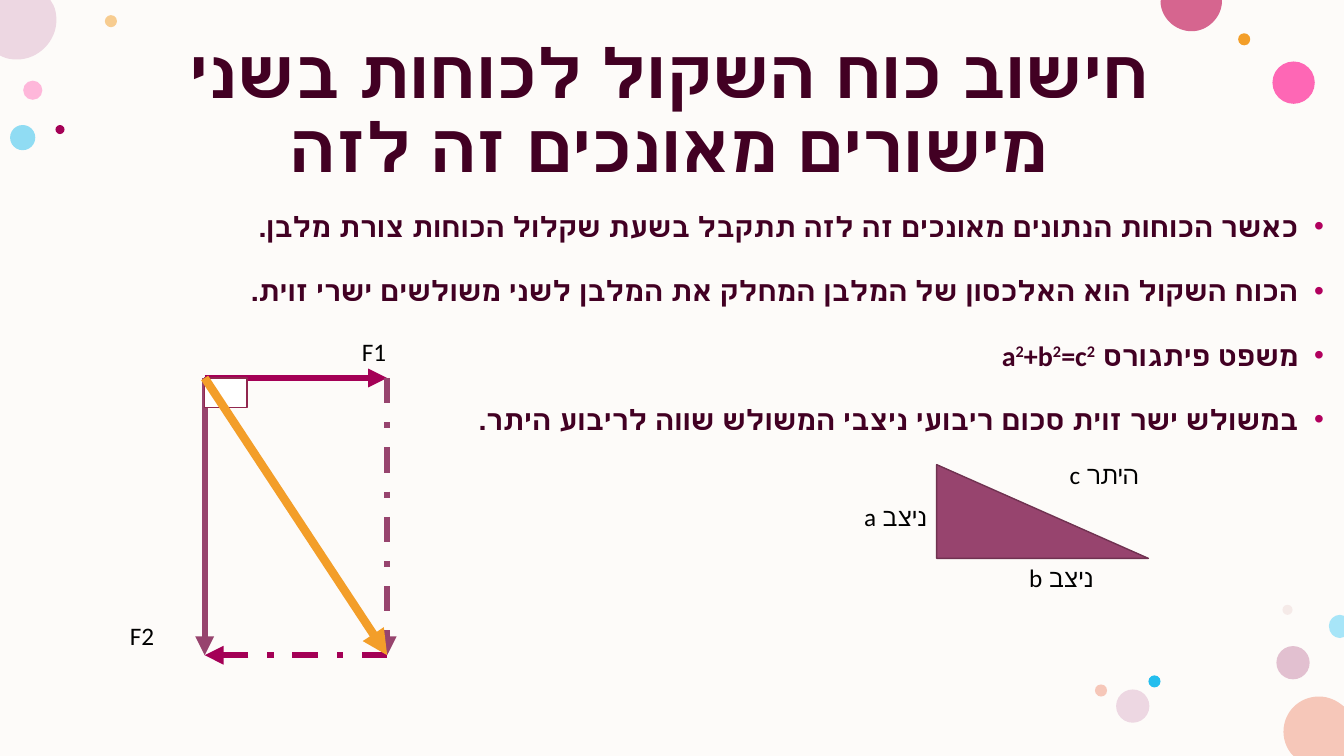
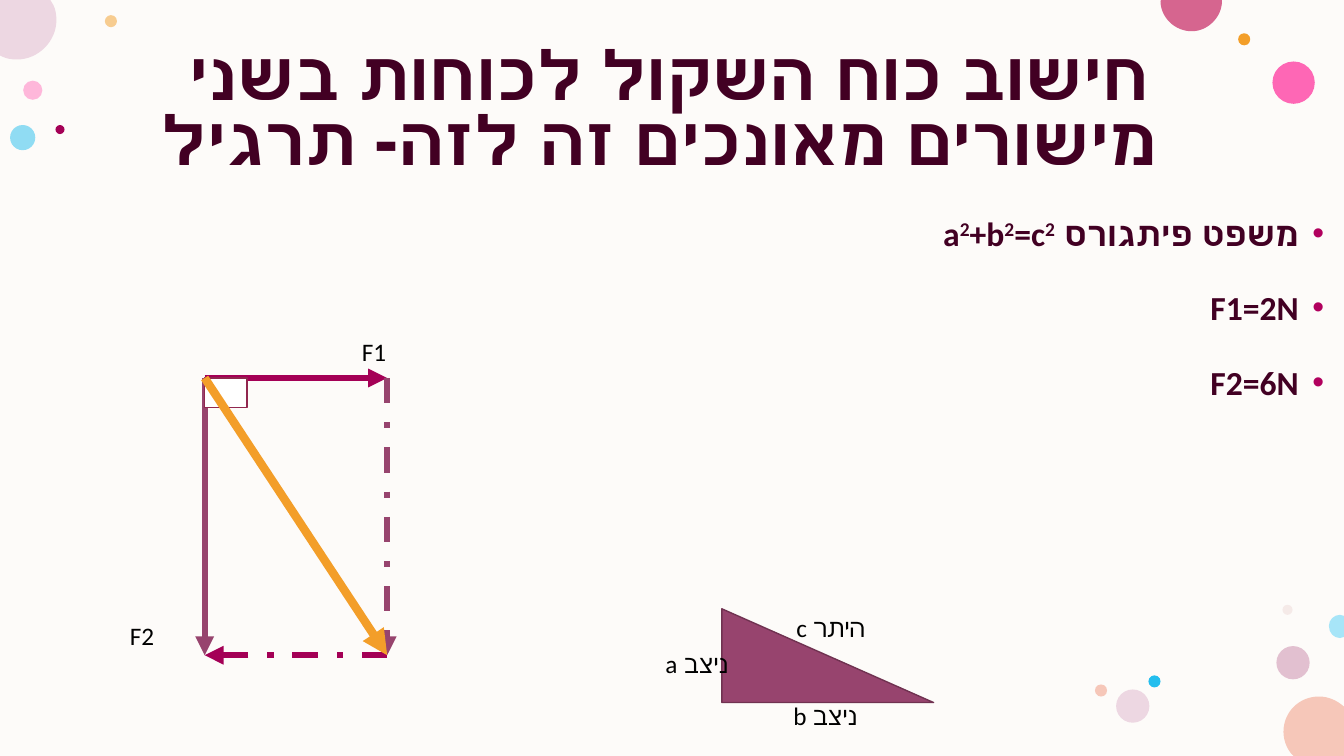
from lxml import etree
from pptx import Presentation
from pptx.dml.color import RGBColor
from pptx.enum import dml, shapes, text
from pptx.oxml import ns
from pptx.util import Inches, Pt

WIDTH, HEIGHT = 13.33, 7.5
FONT = "Calibri"
COLORS = {
    "page": "FDFBF9", "heading": "420023", "bullet": "B1005E", "label": "000000",
    "magenta": "A40056", "plum": "97446E", "plum_edge": "703251", "orange": "F39E29",
    "white": "FFFFFF", "corner_edge": "91274F", "pink": "FF75BD", "hot_pink": "FF2F9C",
    "mauve": "C987A8", "sky": "24BEEE", "pale_sky": "A7E5F8", "blush": "E3BEBE",
    "lilac": "EDD7E2", "peach": "F6C7B9", "rose": "D6658F",
}
BUBBLES = [
    (0.23, 0.8, 0.19, "pink", 50), (1.04, 0.15, 0.12, "orange", 50),
    (12.66, 6.41, 0.33, "mauve", 50), (0.1, 1.24, 0.25, "sky", 50),
    (12.62, 0.61, 0.42, "hot_pink", 72), (12.28, 0.33, 0.12, "orange", 100),
    (12.72, 6, 0.1, "blush", 28), (11.39, 6.7, 0.12, "sky", 100),
    (11.07, 6.84, 0.33, "lilac", 100), (10.86, 6.79, 0.12, "peach", 100),
    (0.55, 1.24, 0.09, "magenta", 100),
]
CUT_BUBBLES = [
    ("peach", [(13.08, 6.91), (13.18, 6.91, 13.26, 6.95, 13.33, 7.01), (13.33, 7.5),
               (12.83, 7.5), (12.81, 7.48), (12.76, 7.42, 12.73, 7.34, 12.73, 7.26),
               (12.73, 7.06, 12.89, 6.91, 13.08, 6.91)]),
    ("lilac", [(0, 0), (0.5, 0), (0.53, 0.05), (0.55, 0.09, 0.56, 0.14, 0.56, 0.2),
               (0.56, 0.41, 0.38, 0.59, 0.17, 0.59),
               (0.11, 0.59, 0.06, 0.58, 0.02, 0.56), (0, 0.55)]),
    ("rose", [(11.52, 0), (12.12, 0), (12.12, 0.01),
              (12.12, 0.17, 11.98, 0.31, 11.82, 0.31),
              (11.65, 0.31, 11.51, 0.17, 11.51, 0.01)]),
    ("pale_sky", [(13.29, 6.1), (13.33, 6.11), (13.33, 6.32), (13.29, 6.33),
                  (13.23, 6.33, 13.18, 6.28, 13.18, 6.21),
                  (13.18, 6.15, 13.23, 6.1, 13.29, 6.1)]),
]
PYTHAGORAS = "משפט פיתגורס a^2+b^2=c^2"


def rgb(name):
    return RGBColor.from_string(COLORS[name])


def box(left, top, width, height):
    return [Inches(side) for side in (left, top, width, height)]


def paint(shape, fill, edge=None, opacity=100):
    shape.shadow.inherit = False
    shape.fill.solid()
    shape.fill.fore_color.rgb = rgb(fill)
    if opacity < 100:
        tint = next(shape.element.iter(ns.qn("a:srgbClr")))
        etree.SubElement(tint, ns.qn("a:alpha"), val=str(opacity * 1000))
    if edge:
        shape.line.color.rgb = rgb(edge)
        shape.line.width = Pt(1)
    else:
        shape.line.fill.background()


def add_solid(slide, preset, place, fill, edge=None, opacity=100):
    solid = slide.shapes.add_shape(preset, *box(*place))
    paint(solid, fill, edge, opacity)
    return solid


def add_cut_bubble(slide, color, steps):
    corners = [(Inches(step[-2]), Inches(step[-1])) for step in steps]
    outline = slide.shapes.build_freeform(*corners[0])
    outline.add_line_segments(corners[1:], close=True)
    bubble = outline.convert_to_shape()
    segments = list(bubble.element.iter(ns.qn("a:lnTo")))
    for segment, step in zip(segments, steps[1:]):
        if len(step) == 6:
            curve = etree.Element(ns.qn("a:cubicBezTo"))
            for x, y in zip(step[::2], step[1::2]):
                etree.SubElement(curve, ns.qn("a:pt"), x=str(Inches(x) - bubble.left),
                                 y=str(Inches(y) - bubble.top))
            segment.getparent().replace(segment, curve)
    paint(bubble, color)
    return bubble


def decorate(layout, slide):
    for holder in list(layout.placeholders)[1:]:
        layout.shapes.element.remove(holder.element)
    decor = [add_solid(slide, shapes.MSO_SHAPE.RECTANGLE, (0, 0, WIDTH, HEIGHT), "page")]
    for left, top, size, color, opacity in BUBBLES:
        decor.append(add_solid(slide, shapes.MSO_SHAPE.OVAL, (left, top, size, size),
                               color, opacity=opacity))
    decor += [add_cut_bubble(slide, *bubble) for bubble in CUT_BUBBLES]
    for part in decor:
        layout.shapes.element.append(part.element)


def style(paragraph, size, color, bold=False):
    font = paragraph.font
    font.name, font.size, font.bold = FONT, Pt(size), bold
    font.color.rgb = rgb(color)


def right_to_left(paragraph):
    paragraph.alignment = text.PP_ALIGN.RIGHT
    properties = paragraph._p.get_or_add_pPr()
    properties.set("rtl", "1")
    return properties


def set_title(slide, words, spacing):
    title = slide.shapes.title
    title.left, title.top, title.width, title.height = box(0.85, 0.4, 11.57, 1.45)
    frame = title.text_frame
    frame.text = words
    frame.word_wrap = True
    frame.auto_size = text.MSO_AUTO_SIZE.NONE
    frame.vertical_anchor = text.MSO_ANCHOR.MIDDLE
    heading = frame.paragraphs[0]
    heading.alignment = text.PP_ALIGN.CENTER
    heading.line_spacing = spacing
    style(heading, 48.6, "heading", True)


def add_powers(paragraph, words):
    first, *powers = words.split("^")
    paragraph.add_run().text = first
    for power in powers:
        exponent = paragraph.add_run()
        exponent.text = power[0]
        exponent.font._element.set("baseline", "30000")
        if power[1:]:
            paragraph.add_run().text = power[1:]


def add_bullets(slide, place, size, lines):
    frame = slide.shapes.add_textbox(*box(*place)).text_frame
    frame.word_wrap = True
    for index, line in enumerate(lines):
        item = frame.add_paragraph() if index else frame.paragraphs[0]
        add_powers(item, line)
        item.line_spacing = 1.5
        item.space_before = Pt(10)
        properties = right_to_left(item)
        properties.set("marL", str(Inches(0.25)))
        properties.set("indent", str(-Inches(0.25)))
        tint = etree.SubElement(properties, ns.qn("a:buClr"))
        etree.SubElement(tint, ns.qn("a:srgbClr"), val=COLORS["bullet"])
        etree.SubElement(properties, ns.qn("a:buFont"), typeface="Arial")
        etree.SubElement(properties, ns.qn("a:buChar"), char="•")
        style(item, size, "heading", True)


def add_label(slide, words, left, top, width=0.7, hebrew=False):
    frame = slide.shapes.add_textbox(*box(left, top, width, 0.4)).text_frame
    frame.word_wrap = True
    frame.auto_size = text.MSO_AUTO_SIZE.SHAPE_TO_FIT_TEXT
    frame.text = words
    label = frame.paragraphs[0]
    if hebrew:
        right_to_left(label)
    style(label, 18, "label")


def add_arrow(slide, start, end, color, weight=4.5, dashed=False):
    arrow = slide.shapes.add_connector(
        shapes.MSO_CONNECTOR.STRAIGHT, *[Inches(value) for value in start + end])
    arrow.line.color.rgb = rgb(color)
    arrow.line.width = Pt(weight)
    if dashed:
        arrow.line.dash_style = dml.MSO_LINE.DASH_DOT
    etree.SubElement(arrow.line._get_or_add_ln(), ns.qn("a:tailEnd"), type="triangle")
    etree.SubElement(arrow.element.spPr, ns.qn("a:effectLst"))


def add_forces(slide):
    left, top, right, bottom = 2.03, 3.75, 3.84, 6.5
    origin, result = (left, top), (right, bottom)
    f1_end, f2_end = (right, top), (left, bottom)
    add_arrow(slide, origin, f1_end, "magenta")
    add_arrow(slide, origin, f2_end, "plum")
    add_solid(slide, shapes.MSO_SHAPE.RECTANGLE, (left, top, 0.42, 0.29),
              "white", "corner_edge")
    add_arrow(slide, f1_end, result, "plum", dashed=True)
    add_arrow(slide, result, f2_end, "magenta", dashed=True)
    add_label(slide, "F1", 3.49, 3.29)
    add_label(slide, "F2", 1.19, 6.1)
    add_arrow(slide, origin, result, "orange", weight=6)


def add_triangle(slide, corner, label_places):
    add_solid(slide, shapes.MSO_SHAPE.RIGHT_TRIANGLE, (*corner, 2.1, 0.93),
              "plum", "plum_edge")
    for words, place in zip(("ניצב a", "ניצב b", "היתר c"), label_places):
        add_label(slide, words, *place, width=1.37, hebrew=True)


def main():
    deck = Presentation()
    deck.slide_width, deck.slide_height = Inches(WIDTH), Inches(HEIGHT)
    layout = deck.slide_layouts[5]
    theory = deck.slides.add_slide(layout)
    decorate(layout, theory)

    set_title(theory, "חישוב כוח השקול לכוחות בשני מישורים מאונכים זה לזה", 0.9)
    add_bullets(theory, (1.1, 1.86, 12.13, 3.68), 20, [
        "כאשר הכוחות הנתונים מאונכים זה לזה תתקבל בשעת שקלול הכוחות צורת מלבן. ",
        "הכוח השקול הוא האלכסון של המלבן המחלק את המלבן לשני משולשים ישרי זוית. ",
        PYTHAGORAS,
        "במשולש ישר זוית סכום ריבועי ניצבי המשולש שווה לריבוע היתר. ",
    ])
    add_forces(theory)
    add_triangle(theory, (9.29, 4.61), [(7.92, 4.92), (9.57, 5.53), (10.02, 4.51)])

    exercise = deck.slides.add_slide(layout)
    set_title(exercise, "חישוב כוח השקול לכוחות בשני מישורים מאונכים זה לזה- תרגיל ", 0.8)
    add_bullets(exercise, (0, 1.86, 13.23, 5.24), 24, [PYTHAGORAS, "F1=2N", "F2=6N"])
    add_forces(exercise)
    add_triangle(exercise, (7.16, 6.04), [(5.95, 6.38), (7.23, 6.9), (7.31, 6.03)])
    deck.save("out.pptx")


if __name__ == "__main__":
    main()
